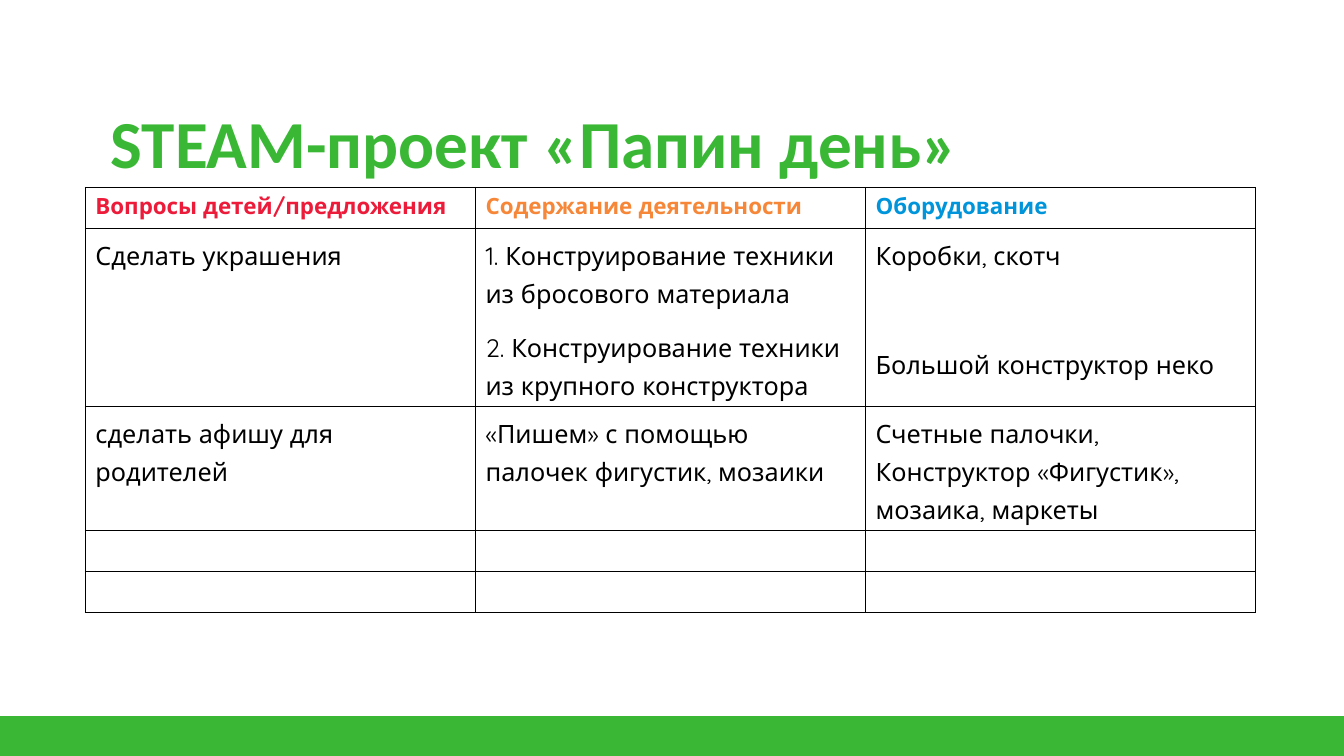
import pptx
import pptx.util
import pptx.dml.color
import pptx.enum.shapes
import pptx.enum.text
import pptx.oxml.ns
import lxml.etree
from dataclasses import dataclass

Pt = pptx.util.Pt


@dataclass(frozen=True)
class Theme:
    """Hold the colours, fonts and type sizes of the slide."""
    green: str = "3AB835"
    red: str = "ED1B3A"
    orange: str = "F68738"
    blue: str = "0095DA"
    black: str = "000000"
    title: int = 48
    head: int = 16
    body: int = 18
    bold: str = "Calibri"
    plain: str = "Quicksand"


THEME = Theme()
HEADS = [
    ("Вопросы детей/предложения", THEME.red),
    ("Содержание деятельности", THEME.orange),
    ("Оборудование", THEME.blue),
]
ROWS = [
    [
        ["Сделать украшения"],
        ["1. Конструирование техники из бросового материала",
         "2. Конструирование техники из крупного конструктора"],
        ["Коробки, скотч", "Большой конструктор неко"],
    ],
    [
        ["сделать афишу для родителей"],
        ["«Пишем» с помощью палочек фигустик, мозаики"],
        ["Счетные палочки, Конструктор «Фигустик», мозаика, маркеты"],
    ],
]
HIGHS = [29.3, 127.2, 88.6, 29.3, 29.3]
GAP = 45.3


def color(code):
    """Turn a hex code into a colour."""
    return pptx.dml.color.RGBColor.from_string(code)


def write(para, text, size=THEME.body, font=THEME.plain, ink=THEME.black,
          bold=False, line=1.0, above=0, below=0):
    """Put formatted text into a paragraph."""
    para.line_spacing = line
    para.space_before, para.space_after = Pt(above), Pt(below)
    run = para.add_run()
    run.text = text
    run.font.size, run.font.name, run.font.bold = Pt(size), font, bold
    run.font.color.rgb = color(ink)


def band(slide, left, top, width, height):
    """Draw the footer band."""
    kind = pptx.enum.shapes.MSO_SHAPE.RECTANGLE
    bar = slide.shapes.add_shape(kind, Pt(left), Pt(top), Pt(width), Pt(height))
    bar.shadow.inherit = False
    bar.fill.solid()
    bar.fill.fore_color.rgb = color(THEME.green)
    bar.line.color.rgb = color(THEME.green)
    bar.line.width = Pt(1)


def title(slide, left, top, width, height):
    """Place the slide title."""
    body = slide.shapes.add_textbox(
        Pt(left), Pt(top), Pt(width), Pt(height)).text_frame
    body.word_wrap = True
    body.vertical_anchor = pptx.enum.text.MSO_ANCHOR.TOP
    body.margin_top = Pt(29.6)
    write(body.paragraphs[0], "STEAM-проект «Папин день»", size=THEME.title,
          font=THEME.bold, ink=THEME.green, bold=True)


def frame(cell):
    """Give a cell thin black borders and no fill."""
    props = cell._tc.get_or_add_tcPr()
    tag = pptx.oxml.ns.qn
    for side in ("a:lnL", "a:lnR", "a:lnT", "a:lnB"):
        edge = lxml.etree.SubElement(props, tag(side), w=str(Pt(1)))
        fill = lxml.etree.SubElement(edge, tag("a:solidFill"))
        lxml.etree.SubElement(fill, tag("a:srgbClr"), val=THEME.black)
    cell.fill.background()


def table(slide, left, top, width, height):
    """Lay out the project plan."""
    grid = slide.shapes.add_table(
        len(HIGHS), len(HEADS), Pt(left), Pt(top), Pt(width), Pt(height)).table
    grid.first_row = grid.horz_banding = False
    for col in grid.columns:
        col.width = Pt(width / len(HEADS))
    for row, high in zip(grid.rows, HIGHS):
        row.height = Pt(high)
    for cell in grid.iter_cells():
        frame(cell)
    for col, (text, ink) in enumerate(HEADS):
        write(grid.cell(0, col).text_frame.paragraphs[0], text,
              size=THEME.head, ink=ink, bold=True)
    for row, cells in enumerate(ROWS, 1):
        for col, texts in enumerate(cells):
            body = grid.cell(row, col).text_frame
            for num, text in enumerate(texts):
                para = body.add_paragraph() if num else body.paragraphs[0]
                above = GAP if num and col == 2 else 6
                write(para, text, line=1.2, above=above, below=6)


def main():
    """Build and save the slide."""
    deck = pptx.Presentation()
    deck.slide_width, deck.slide_height = Pt(960), Pt(540)
    slide = deck.slides.add_slide(deck.slide_layouts[6])
    band(slide, -1.4, 512, 961.4, 28)
    title(slide, 72, 42.5, 771, 145.5)
    table(slide, 61, 134, 836, sum(HIGHS))
    deck.save("out.pptx")


if __name__ == "__main__":
    main()
